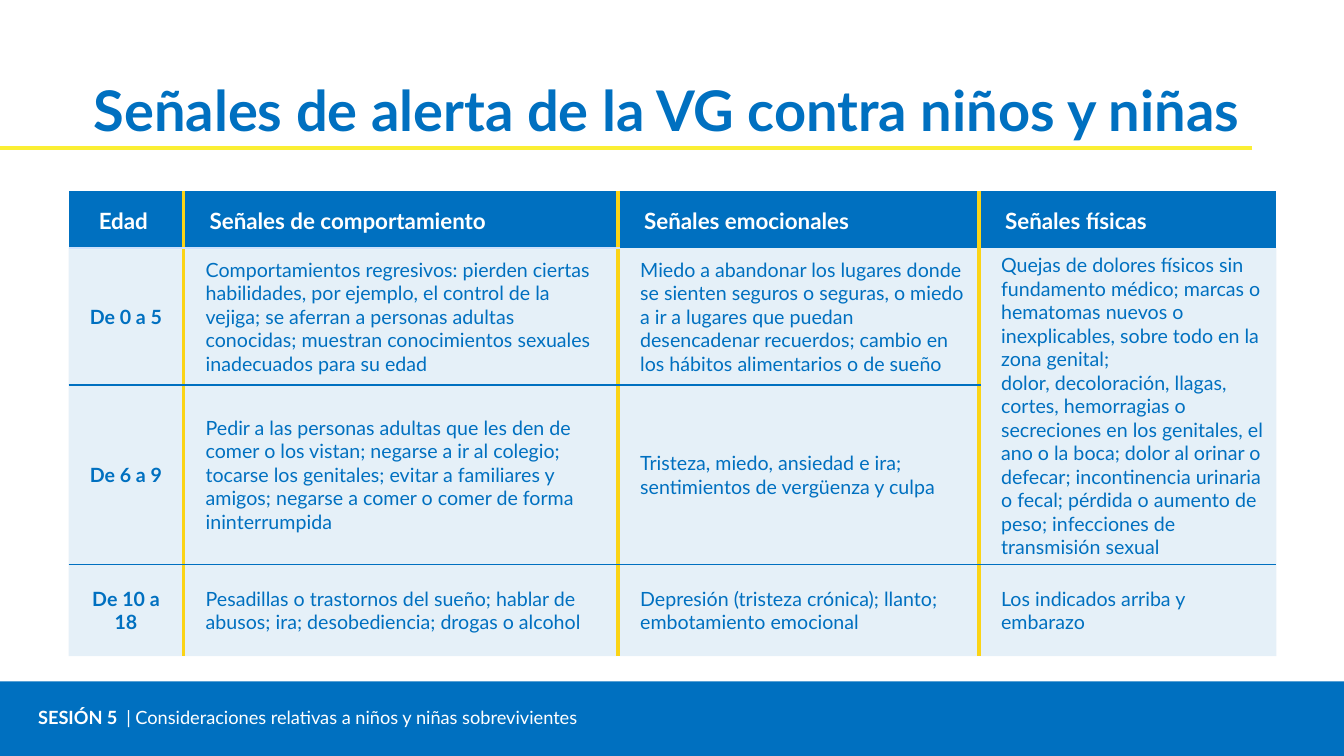
"""Build the slide on warning signs of gender violence against children."""
from dataclasses import dataclass
from typing import Any, NamedTuple

from lxml.etree import SubElement
from pptx import Presentation
from pptx.dml.color import RGBColor
from pptx.enum.shapes import MSO_CONNECTOR, MSO_SHAPE
from pptx.enum.text import MSO_ANCHOR, MSO_AUTO_SIZE, PP_ALIGN
from pptx.oxml.ns import qn
from pptx.util import Emu, Inches, Pt

COLORS = {"blue": "0070C0", "white": "FFFFFF", "yellow": "FBEF33",
          "gold": "FBD416", "ice": "CFE1FC"}
COLUMNS, ROWS = 1333, 750
SLIDE_WIDTH, SLIDE_HEIGHT = Inches(13.33), Inches(7.5)
COLUMN_WIDTHS = (114, 431, 358, 295)
ROW_HEIGHTS = (57, 136, 178, 91)


class Area(NamedTuple):
    left: float
    top: float
    width: float
    height: float


class Rule(NamedTuple):
    color: str
    column_count: int


@dataclass
class AgeGroup:
    age: str
    behaviour: str
    emotions: str
    body: str

    def texts(self) -> tuple[str, ...]:
        return self.age, self.behaviour, self.emotions, self.body


@dataclass
class TextStyle:
    size: float
    color: str
    bold: bool = True
    align: PP_ALIGN = PP_ALIGN.LEFT


RULES_ABOVE = {1: Rule("ice", 2), 2: Rule("blue", 3), 3: Rule("blue", 4)}

GROUPS = [
    AgeGroup("Edad", "Señales de comportamiento", "Señales emocionales", "Señales físicas"),
    AgeGroup(
        "De 0 a 5",
        "Comportamientos regresivos: pierden ciertas habilidades, por ejemplo, el control "
        "de la vejiga; se aferran a personas adultas conocidas; muestran conocimientos "
        "sexuales inadecuados para su edad",
        "Miedo a abandonar los lugares donde se sienten seguros o seguras, o miedo a ir a "
        "lugares que puedan desencadenar recuerdos; cambio en los hábitos alimentarios o "
        "de sueño",
        "Quejas de dolores físicos sin fundamento médico; marcas o hematomas nuevos o "
        "inexplicables, sobre todo en la zona genital;\n"
        "dolor, decoloración, llagas, cortes, hemorragias o secreciones en los genitales, "
        "el ano o la boca; dolor al orinar o defecar; incontinencia urinaria o fecal; "
        "pérdida o aumento de peso; infecciones de transmisión sexual"),
    AgeGroup(
        "De 6 a 9",
        "Pedir a las personas adultas que les den de comer o los vistan; negarse a ir al "
        "colegio; tocarse los genitales; evitar a familiares y amigos; negarse a comer o "
        "comer de forma ininterrumpida",
        "Tristeza, miedo, ansiedad e ira; sentimientos de vergüenza y culpa",
        ""),
    AgeGroup(
        "De 10 a 18",
        "Pesadillas o trastornos del sueño; hablar de abusos; ira; desobediencia; drogas "
        "o alcohol",
        "Depresión (tristeza crónica); llanto; embotamiento emocional",
        "Los indicados arriba y embarazo"),
]


def across(columns: float) -> Emu:
    return Emu(round(SLIDE_WIDTH * columns / COLUMNS))


def down(rows: float) -> Emu:
    return Emu(round(SLIDE_HEIGHT * rows / ROWS))


def place(area: Area) -> tuple[Emu, Emu, Emu, Emu]:
    return across(area.left), down(area.top), across(area.width), down(area.height)


def apply(target: Any, values: dict[str, Any]) -> None:
    for name, value in values.items():
        setattr(target, name, value)


def rgb(name: str) -> RGBColor:
    return RGBColor.from_string(COLORS[name])


def style_span(span: Any, style: TextStyle) -> None:
    apply(span.font, {"name": "Lato", "size": Pt(style.size), "bold": style.bold})
    span.font.color.rgb = rgb(style.color)


def style_frame(frame: Any, style: TextStyle) -> None:
    for para in frame.paragraphs:
        para.alignment = style.align
        for span in para.runs:
            style_span(span, style)


def add_bar(page: Any, area: Area) -> Any:
    bar = page.shapes.add_shape(MSO_SHAPE.RECTANGLE, *place(area))
    bar.shadow.inherit = False
    bar.fill.solid()
    bar.fill.fore_color.rgb = rgb("blue")
    bar.line.fill.background()
    return bar


def add_footer(page: Any) -> None:
    add_bar(page, Area(0, 676, COLUMNS, 74))
    frame = add_bar(page, Area(28, 696, 761, 32)).text_frame
    apply(frame, {"word_wrap": True, "vertical_anchor": MSO_ANCHOR.MIDDLE})
    para = frame.paragraphs[0]
    para.alignment = PP_ALIGN.LEFT
    for text, bold in (("SESIÓN 5  ", True),
                       ("| Consideraciones relativas a niños y niñas sobrevivientes", False)):
        span = para.add_run()
        span.text = text
        style_span(span, TextStyle(13, "white", bold))


def add_title(page: Any) -> None:
    title = page.shapes.title
    apply(title, dict(zip(("left", "top", "width", "height"), place(Area(83, 75, 1206, 72)))))
    frame = title.text_frame
    frame.text = "Señales de alerta de la VG contra niños y niñas"
    apply(frame, {"word_wrap": True, "auto_size": MSO_AUTO_SIZE.NONE,
                  "vertical_anchor": MSO_ANCHOR.BOTTOM})
    style_frame(frame, TextStyle(40, "blue"))
    line = page.shapes.add_connector(
        MSO_CONNECTOR.STRAIGHT, across(1242), down(147), across(0), down(147))
    line.line.color.rgb = rgb("yellow")
    line.line.width = Pt(3)
    SubElement(line._element.spPr, qn("a:effectLst"))


def add_border(cell: Any, side: str, color: str | None, points: float) -> None:
    border = SubElement(cell._tc.get_or_add_tcPr(), qn(f"a:ln{side}"), w=str(Pt(points)))
    if color is None:
        SubElement(border, qn("a:noFill"))
    else:
        fill = SubElement(border, qn("a:solidFill"))
        SubElement(fill, qn("a:srgbClr"), val=COLORS[color])


def rule_color(row: int, column: int) -> str | None:
    rule = RULES_ABOVE.get(row)
    return rule.color if rule and column < rule.column_count else None


def fill_cell(cell: Any, row: int, column: int, text: str) -> None:
    header, age = row == 0, column == 0
    add_border(cell, "L", None if age else "gold", 3)
    add_border(cell, "R", "gold" if column < len(COLUMN_WIDTHS) - 1 else None, 3)
    add_border(cell, "T", rule_color(row, column), 1)
    add_border(cell, "B", rule_color(row + 1, column), 1)
    cell.fill.solid()
    cell.fill.fore_color.rgb = rgb("blue")
    if header:
        style = TextStyle(16, "white")
        left = 30 if age else 26
    else:
        tint = cell._tc.tcPr.find(qn("a:solidFill")).find(qn("a:srgbClr"))
        SubElement(tint, qn("a:alpha"), val="10000")
        style = TextStyle(14, "blue", age, PP_ALIGN.CENTER if age else PP_ALIGN.LEFT)
        left = 10 if age else 22
    apply(cell, {"margin_left": across(left), "margin_right": across(10),
                 "margin_top": down(17 if header else 5), "margin_bottom": down(5),
                 "vertical_anchor": MSO_ANCHOR.TOP if header else MSO_ANCHOR.MIDDLE})
    if text:
        cell.text_frame.text = text
        style_frame(cell.text_frame, style)


def add_signs_table(page: Any) -> None:
    area = Area(68, 189, sum(COLUMN_WIDTHS), sum(ROW_HEIGHTS))
    table = page.shapes.add_table(len(ROW_HEIGHTS), len(COLUMN_WIDTHS), *place(area)).table
    apply(table, {"first_row": False, "horz_banding": False})
    for column, width in zip(table.columns, COLUMN_WIDTHS):
        column.width = across(width)
    for row, height in zip(table.rows, ROW_HEIGHTS):
        row.height = down(height)
    table.cell(1, 3).merge(table.cell(2, 3))
    for row, group in enumerate(GROUPS):
        for column, text in enumerate(group.texts()):
            fill_cell(table.cell(row, column), row, column, text)


def main() -> None:
    deck = Presentation()
    apply(deck, {"slide_width": SLIDE_WIDTH, "slide_height": SLIDE_HEIGHT})
    page = deck.slides.add_slide(deck.slide_layouts[5])
    add_footer(page)
    add_title(page)
    add_signs_table(page)
    deck.save("out.pptx")


if __name__ == "__main__":
    main()
